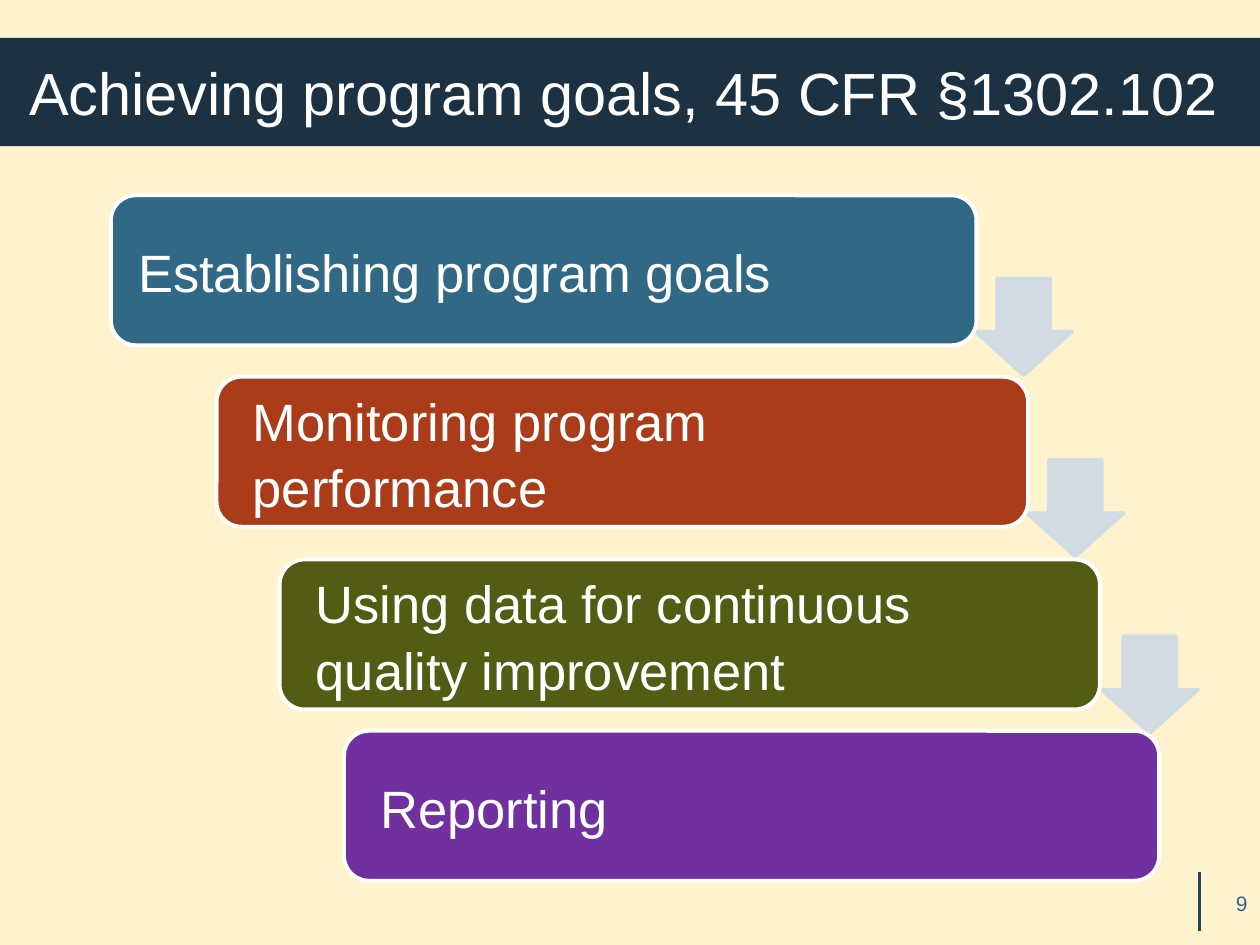
from dataclasses import dataclass

from lxml.etree import SubElement
from pptx import Presentation
from pptx.dml.color import RGBColor as RGB
from pptx.enum.shapes import MSO_CONNECTOR as CONN, MSO_SHAPE as SHAPE
from pptx.enum.text import MSO_ANCHOR as ANCHOR, MSO_AUTO_SIZE as FIT, PP_ALIGN as ALIGN
from pptx.oxml.ns import qn
from pptx.util import Pt

COLORS = {
    "background": "FFF3CD",
    "banner": "1C3141",
    "white": "FFFFFF",
    "goals": "316886",
    "monitoring": "AB3C19",
    "data": "535C13",
    "reporting": "7030A0",
    "arrow": "CFDAE5",
    "rule": "20455A",
    "number": "376092",
}
STEP_HEIGHT = 85.7
ARROW_SIZE = 55.4


@dataclass
class Step:
    text: str
    color: str
    left: float
    top: float
    width: float
    indent: float = 9.4


@dataclass
class Arrow:
    left: float
    top: float


STEPS = [
    Step("Establishing program goals", "goals", 63.4, 111.6, 494.6, 4.3),
    Step("Monitoring program \vperformance", "monitoring", 123.8, 215.3, 463.7),
    Step("Using data for continuous \vquality improvement", "data", 159.8, 319.7, 468.7),
    Step("Reporting", "reporting", 196.6, 417.6, 465.8),
]
ARROWS = [Arrow(557.3, 159.1), Arrow(586.8, 262.8), Arrow(629.3, 363.6)]


def rgb(name: str) -> RGB:
    return RGB.from_string(COLORS[name])


def paint(fill, color: str) -> None:
    fill.solid()
    fill.fore_color.rgb = rgb(color)


def write(sp, text: str, size: float, color: str, frame: dict, para: dict, indent: float = 0) -> None:
    tf = sp.text_frame
    for key, value in {"word_wrap": True, "auto_size": FIT.NONE, **frame}.items():
        setattr(tf, key, value)
    p = tf.paragraphs[0]
    p.text = text
    for key, value in para.items():
        setattr(p, key, value)
    pPr = p._p.get_or_add_pPr()
    pPr.set("marL", str(Pt(indent)))
    pPr.set("indent", "0")
    for r in p.runs:
        for key, value in {"name": "Arial", "size": Pt(size), "bold": False}.items():
            setattr(r.font, key, value)
        r.font.color.rgb = rgb(color)


def add_step(s, step: Step) -> None:
    sp = s.shapes.add_shape(SHAPE.ROUNDED_RECTANGLE, Pt(step.left), Pt(step.top),
                            Pt(step.width), Pt(STEP_HEIGHT))
    sp.shadow.inherit = False
    paint(sp.fill, step.color)
    paint(sp.line.fill, "white")
    sp.line.width = Pt(2.25)
    write(sp, step.text, 30, "white", {"vertical_anchor": ANCHOR.MIDDLE},
          {"alignment": ALIGN.LEFT, "line_spacing": 1.05}, step.indent)


def add_arrow(s, arrow: Arrow) -> None:
    sp = s.shapes.add_shape(SHAPE.DOWN_ARROW, Pt(arrow.left), Pt(arrow.top),
                            Pt(ARROW_SIZE), Pt(ARROW_SIZE))
    sp.shadow.inherit = False
    sp.adjustments[0], sp.adjustments[1] = 0.55, 0.45
    paint(sp.fill, "arrow")
    paint(sp.line.fill, "arrow")
    sp.line.width = Pt(2)
    for clr in sp._element.spPr.iter(qn("a:srgbClr")):
        SubElement(clr, qn("a:alpha"), val="90000")
    SubElement(sp.line._get_or_add_ln(), qn("a:round"))


def add_title(s, text: str) -> None:
    sp = s.shapes.title
    place = {"left": 0, "top": 21.6, "width": 720, "height": 61.9}
    for key, value in place.items():
        setattr(sp, key, Pt(value))
    paint(sp.fill, "banner")
    write(sp, text, 34, "white", {"vertical_anchor": ANCHOR.MIDDLE},
          {"alignment": ALIGN.LEFT}, 9.4)


def add_footer(s, number: str) -> None:
    rule = s.shapes.add_connector(CONN.STRAIGHT, Pt(685.4), Pt(498.2), Pt(685.4), Pt(532.1))
    paint(rule.line.fill, "rule")
    rule.line.width = Pt(2)
    SubElement(rule._element.spPr, qn("a:effectLst"))
    box = s.shapes.add_textbox(Pt(662.4), Pt(505.4), Pt(57.6), Pt(28.8))
    write(box, number, 12, "number", {"vertical_anchor": ANCHOR.TOP}, {"alignment": ALIGN.RIGHT})


def main() -> None:
    prs = Presentation()
    prs.slide_width, prs.slide_height = Pt(720), Pt(540)
    s = prs.slides.add_slide(prs.slide_layouts[5])
    paint(s.background.fill, "background")
    add_title(s, "Achieving program goals, 45 CFR §1302.102")
    for arrow in ARROWS:
        add_arrow(s, arrow)
    for step in STEPS:
        add_step(s, step)
    add_footer(s, "9")
    prs.save("out.pptx")


if __name__ == "__main__":
    main()
